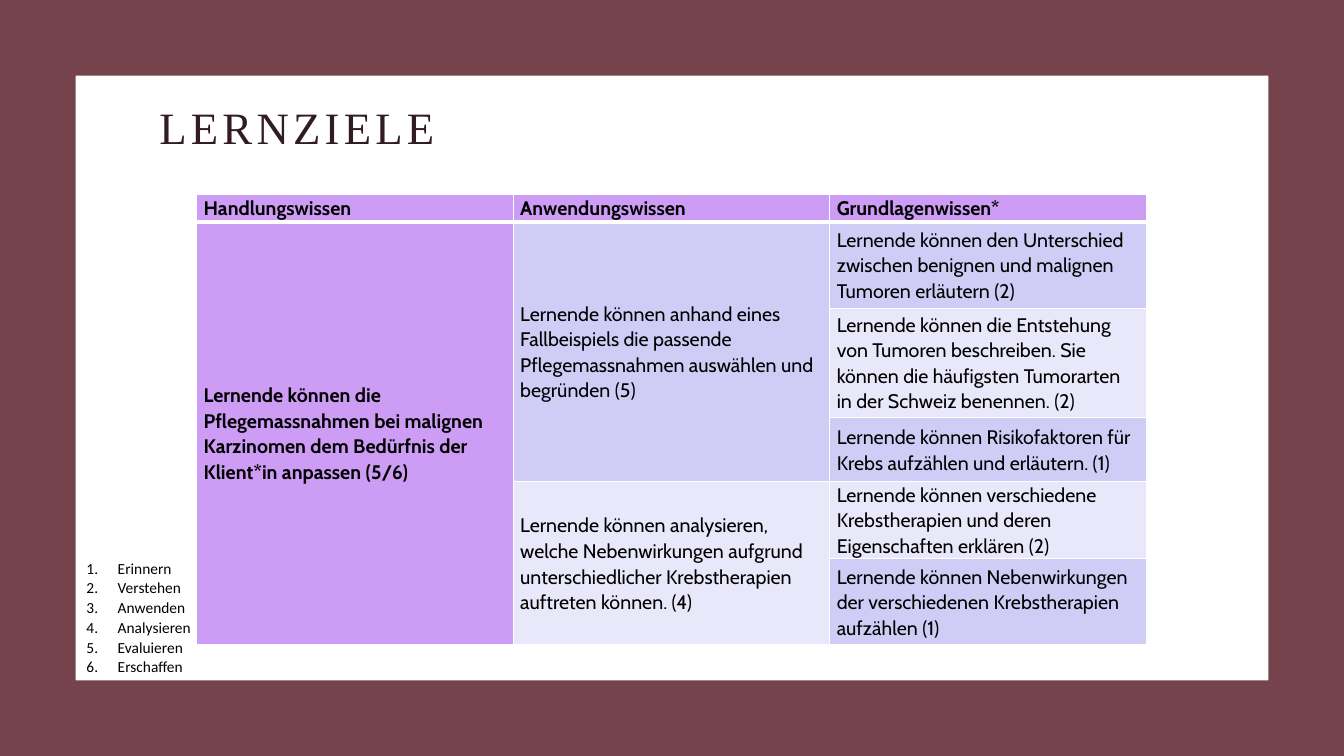
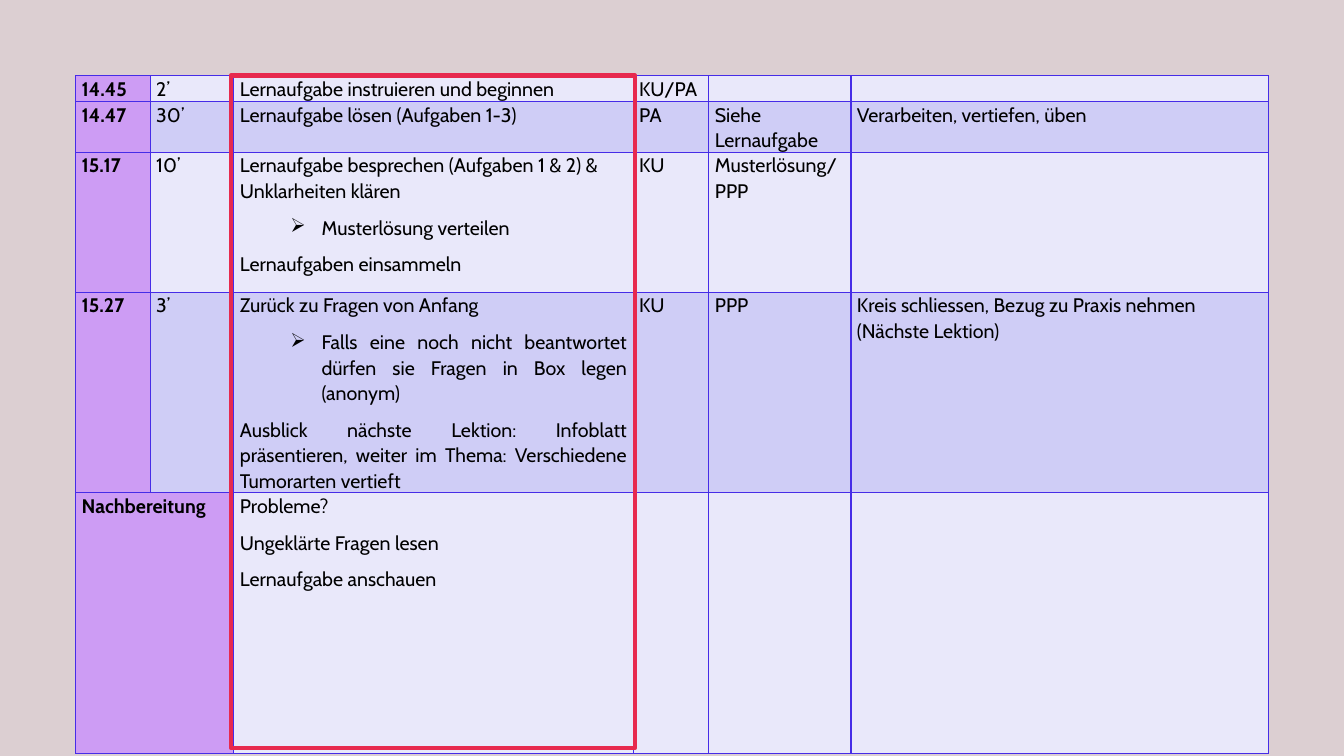
from lxml.etree import SubElement
from pptx import Presentation
from pptx.dml.color import RGBColor
from pptx.enum.shapes import MSO_SHAPE
from pptx.enum.text import MSO_ANCHOR, PP_ALIGN
from pptx.oxml.ns import qn
from pptx.util import Inches, Pt

WINE = RGBColor(0x76, 0x43, 0x4D)
DARK = RGBColor(0x31, 0x1C, 0x20)
WHITE = RGBColor(0xFF, 0xFF, 0xFF)
BLACK = RGBColor(0, 0, 0)
VIOLET = RGBColor(0xCD, 0x9C, 0xF4)
LILAC = RGBColor(0xCF, 0xCD, 0xF6)
PALE = RGBColor(0xE9, 0xE8, 0xFA)
BLUE = RGBColor(0x46, 0x2C, 0xE7)
RED = RGBColor(0xE7, 0x29, 0x4E)
NO_STYLE = "{2D5ABB26-0587-4C30-8999-92F81FD0307C}"
ARROW = "➢"
LINE_SPACING = 1.07


def indent(p, tag, **attrs):
    """Give a paragraph a hanging indent and a bullet element of the given tag."""
    pPr = p._p.get_or_add_pPr()
    pPr.set("marL", str(Inches(0.81)))
    pPr.set("indent", str(Inches(-0.31)))
    SubElement(pPr, qn(tag), **attrs)


def add_grid(slide, left, top, widths, heights, rows, inset, line, header=False):
    """Add a banded table; each cell text is split into paragraphs at line ends."""
    table = slide.shapes.add_table(len(heights), len(widths), Inches(left), Inches(top),
                                   Inches(sum(widths)), Inches(sum(heights))).table
    table.first_row = table.horz_banding = False
    table._tbl.tblPr.find(qn("a:tableStyleId")).text = NO_STYLE
    for column, width in zip(table.columns, widths):
        column.width = Inches(width)
    for row, height in zip(table.rows, heights):
        row.height = Inches(height)

    for i, texts in enumerate(rows):
        for j, text in enumerate(texts):
            cell = table.cell(i, j)
            cell.margin_left = cell.margin_right = Inches(inset)
            cell.margin_top = cell.margin_bottom = 0
            tcPr = cell._tc.get_or_add_tcPr()
            for side in "LRTB":
                thick = header and (i, side) in ((0, "B"), (1, "T"))
                ln = SubElement(tcPr, qn(f"a:ln{side}"), w=str(Pt(3 if thick else 1)))
                SubElement(SubElement(ln, qn("a:solidFill")), qn("a:srgbClr"), val=str(line))
            strong = j == 0 or (header and i == 0)
            cell.fill.solid()
            cell.fill.fore_color.rgb = VIOLET if strong else LILAC if i % 2 else PALE

            tf = cell.text_frame
            for n, part in enumerate(text.split("\n")):
                p = tf.add_paragraph() if n else tf.paragraphs[0]
                if not part:
                    SubElement(p._p, qn("a:endParaRPr"), sz="1400")
                    continue
                p.line_spacing = LINE_SPACING
                p.space_after = Pt(8)
                if part.startswith(ARROW):
                    indent(p, "a:buChar", char=ARROW)
                r = p.add_run()
                r.text = part.removeprefix(ARROW)
                r.font.name, r.font.size, r.font.bold = "Cabin", Pt(14), strong
                r.font.color.rgb = BLACK
    return table


prs = Presentation()
prs.slide_width, prs.slide_height = Inches(13.33), Inches(7.5)
goals = prs.slides.add_slide(prs.slide_layouts[5])
plan = prs.slides.add_slide(prs.slide_layouts[6])

# Shared backdrop: wine frame and white panel
for slide, opacity in ((goals, 100), (plan, 25)):
    for box, color in (((0, 0, 13.33, 7.5), WINE), ((0.75, 0.75, 11.83, 6), WHITE)):
        sp = slide.shapes.add_shape(MSO_SHAPE.RECTANGLE, *map(Inches, box))
        sp.shadow.inherit = False
        sp.fill.solid()
        sp.fill.fore_color.rgb = color
        sp.line.fill.background()
        if color == WINE and opacity < 100:
            clr = sp._element.spPr.find(qn("a:solidFill")).find(qn("a:srgbClr"))
            SubElement(clr, qn("a:alpha"), val=str(opacity * 1000))

# Slide 1: learning goals
title = goals.shapes.title
goals.shapes._spTree.append(title._element)  # bring in front of the panel
title.left, title.top, title.width, title.height = map(Inches, (1.48, 0.75, 10.38, 0.83))
tf = title.text_frame
tf.vertical_anchor = MSO_ANCHOR.BOTTOM
p = tf.paragraphs[0]
p.alignment = PP_ALIGN.LEFT
p.line_spacing = 0.9
r = p.add_run()
r.text = "LERNZIELE"
r.font.name, r.font.size = "Times New Roman", Pt(32)
r.font.color.rgb = DARK
r._r.get_or_add_rPr().set("spc", "300")

goal_rows = [
    ("Handlungswissen", "Anwendungswissen", "Grundlagenwissen*"),
    ("Lernende können die Pflegemassnahmen bei malignen Karzinomen dem Bedürfnis der "
     "Klient*in anpassen (5/6)",
     "Lernende können anhand eines Fallbeispiels die passende Pflegemassnahmen auswählen "
     "und begründen (5)",
     "Lernende können den Unterschied zwischen benignen und malignen Tumoren erläutern (2)"),
    ("", "", "Lernende können die Entstehung von Tumoren beschreiben. Sie können die "
     "häufigsten Tumorarten in der Schweiz benennen. (2)"),
    ("", "", "Lernende können Risikofaktoren für Krebs aufzählen und erläutern. (1)"),
    ("", "Lernende können analysieren, welche Nebenwirkungen aufgrund unterschiedlicher "
     "Krebstherapien auftreten können. (4)",
     "Lernende können verschiedene Krebstherapien und deren Eigenschaften erklären (2)"),
    ("", "", "Lernende können Nebenwirkungen der verschiedenen Krebstherapien aufzählen (1)"),
]
table = add_grid(goals, 1.95, 1.93, [3.14] * 3, [0.27, 0.86, 1.08, 0.64, 0.76, 0.86],
                 goal_rows, 0.07, WHITE, header=True)
for first, last, col in ((1, 5, 0), (1, 3, 1), (4, 5, 1)):
    table.cell(first, col).merge(table.cell(last, col))
for i in range(1, len(goal_rows)):
    for j in range(3):
        table.cell(i, j).vertical_anchor = MSO_ANCHOR.MIDDLE

levels = ["Erinnern", "Verstehen", "Anwenden", "Analysieren", "Evaluieren", "Erschaffen"]
tf = goals.shapes.add_textbox(*map(Inches, (0.26, 5.48, 6.67, 1.28))).text_frame
tf.word_wrap = True
for n, level in enumerate(levels):
    p = tf.add_paragraph() if n else tf.paragraphs[0]
    p.line_spacing = LINE_SPACING
    indent(p, "a:buAutoNum", type="arabicPeriod")
    r = p.add_run()
    r.text = level
    r.font.name, r.font.size = "Calibri", Pt(11)
    r.font.color.rgb = BLACK

# Slide 2: lesson plan
plan_rows = [
    ("14.45", "2’", "Lernaufgabe instruieren und beginnen", "KU/PA", "", ""),
    ("14.47", "30’", "Lernaufgabe lösen (Aufgaben 1-3)", "PA", "Siehe Lernaufgabe",
     "Verarbeiten, vertiefen, üben"),
    ("15.17", "10’",
     "Lernaufgabe besprechen (Aufgaben 1 & 2) & Unklarheiten klären\n"
     "➢Musterlösung verteilen\nLernaufgaben einsammeln",
     "KU", "Musterlösung/PPP", ""),
    ("15.27", "3’",
     "Zurück zu Fragen von Anfang\n"
     "➢Falls eine noch nicht beantwortet dürfen sie Fragen in Box legen (anonym)\n"
     "Ausblick nächste Lektion: Infoblatt präsentieren, weiter im Thema: Verschiedene "
     "Tumorarten vertieft",
     "KU", "PPP", "Kreis schliessen, Bezug zu Praxis nehmen (Nächste Lektion)"),
    ("Nachbereitung", "", "Probleme?\nUngeklärte Fragen lesen\nLernaufgabe anschauen",
     "", "", ""),
]
table = add_grid(plan, 0.75, 0.75, [0.74, 0.83, 3.96, 0.75, 1.41, 4.14],
                 [0.26, 0.5, 1.39, 1.99, 2.59], plan_rows, 0.06, BLUE)
table.cell(4, 0).merge(table.cell(4, 1))
for p in table.cell(3, 2).text_frame.paragraphs:
    p.alignment = PP_ALIGN.JUSTIFY

frame = plan.shapes.add_shape(MSO_SHAPE.RECTANGLE, *map(Inches, (2.29, 0.75, 4.01, 6.67)))
frame.shadow.inherit = False
frame.fill.background()
frame.line.color.rgb = RED
frame.line.width = Pt(3)

prs.save("out.pptx")
